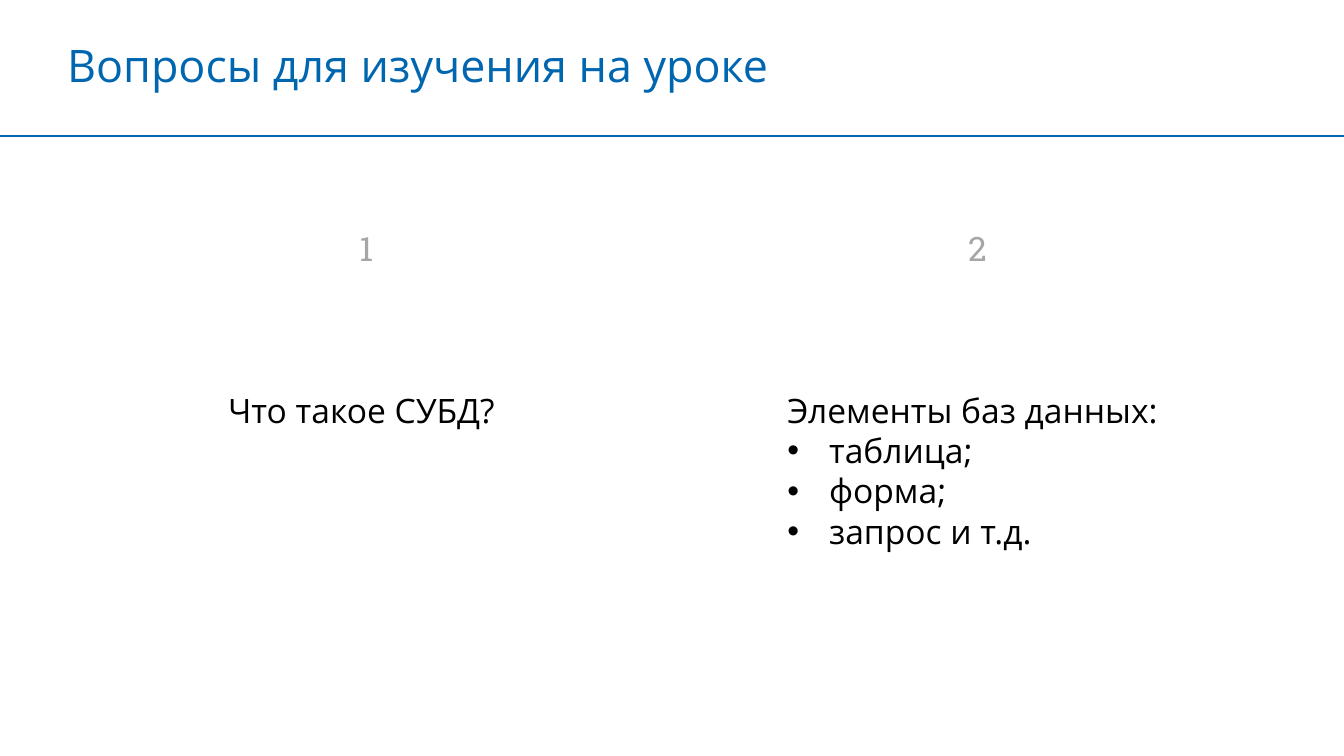
from dataclasses import dataclass

from lxml import etree
from pptx import Presentation
from pptx.dml.color import RGBColor
from pptx.enum.shapes import MSO_CONNECTOR, MSO_SHAPE
from pptx.enum.text import MSO_ANCHOR, MSO_AUTO_SIZE, PP_ALIGN
from pptx.oxml.ns import qn
from pptx.util import Cm, Pt

STRAIGHT = MSO_CONNECTOR.STRAIGHT
ROUNDED = MSO_SHAPE.ROUNDED_RECTANGLE
MIDDLE = MSO_ANCHOR.MIDDLE
CENTER = PP_ALIGN.CENTER
FIT_SHAPE = MSO_AUTO_SIZE.SHAPE_TO_FIT_TEXT


@dataclass(frozen=True)
class Theme:
    accent: RGBColor = RGBColor(0x00, 0x66, 0xB0)
    text: RGBColor = RGBColor(0x00, 0x00, 0x00)
    number: RGBColor = RGBColor(0xA6, 0xA6, 0xA6)
    badge: RGBColor = RGBColor(0xFF, 0xFF, 0xFF)
    body_font: str = "Open Sans"
    number_font: str = "Roboto Slab"
    title_size: Pt = Pt(24)
    body_size: Pt = Pt(18)


THEME = Theme()


def add_run(paragraph, words, size, color, font):
    run = paragraph.add_run()
    run.text = words
    run.font.size = size
    run.font.name = font
    run.font.color.rgb = color


def add_text(slide, left, top, width, height, lines, size, color):
    """Add a text box; every line after the first is a bullet."""
    box = slide.shapes.add_textbox(Cm(left), Cm(top), Cm(width), Cm(height))
    frame = box.text_frame
    frame.word_wrap = True
    frame.auto_size = FIT_SHAPE
    for i, line in enumerate(lines):
        paragraph = frame.add_paragraph() if i else frame.paragraphs[0]
        add_run(paragraph, line, size, color, THEME.body_font)
        if i:
            properties = paragraph._p.get_or_add_pPr()
            properties.set("marL", str(Cm(0.79)))
            properties.set("indent", str(-Cm(0.79)))
            etree.SubElement(properties, qn("a:buFont")).set("typeface", "Arial")
            etree.SubElement(properties, qn("a:buChar")).set("char", "•")


prs = Presentation()
prs.slide_width = Cm(25.4)
prs.slide_height = Cm(14.29)
slide = prs.slides.add_slide(prs.slide_layouts[6])

# Title and the rule under it
add_text(slide, 1.02, 0.58, 20.62, 1.28, ["Вопросы для изучения на уроке"],
         THEME.title_size, THEME.accent)
rule = slide.shapes.add_connector(STRAIGHT, 0, Cm(2.57), prs.slide_width, Cm(2.57))
rule.line.color.rgb = THEME.accent
rule.line.width = Pt(1)
etree.SubElement(rule._element.spPr, qn("a:effectLst"))

# Questions: text left, text width, text height, badge left, lines
questions = [
    (4.06, 5.72, 1.02, 6.05, ["Что такое СУБД?"]),
    (14.63, 7.7, 3.33, 17.6,
     ["Элементы баз данных:", "таблица;", "форма;", "запрос и т.д."]),
]
for number, (left, width, height, badge_left, lines) in enumerate(questions, 1):
    add_text(slide, left, 7.24, width, height, lines, THEME.body_size, THEME.text)

    # Numbered badge above the question
    badge = slide.shapes.add_shape(ROUNDED, Cm(badge_left), Cm(3.81), Cm(1.75), Cm(1.75))
    badge.adjustments[0] = 0.4
    badge.shadow.inherit = False
    badge.line.fill.background()
    badge.fill.solid()
    badge.fill.fore_color.rgb = THEME.badge
    tint = badge._element.spPr.find(qn("a:solidFill"))[0]
    etree.SubElement(tint, qn("a:alpha")).set("val", "75000")

    frame = badge.text_frame
    frame.margin_left = frame.margin_right = frame.margin_top = frame.margin_bottom = 0
    frame.word_wrap = False
    frame.vertical_anchor = MIDDLE
    label = frame.paragraphs[0]
    label.alignment = CENTER
    add_run(label, str(number), THEME.body_size, THEME.number, THEME.number_font)

prs.save("out.pptx")
